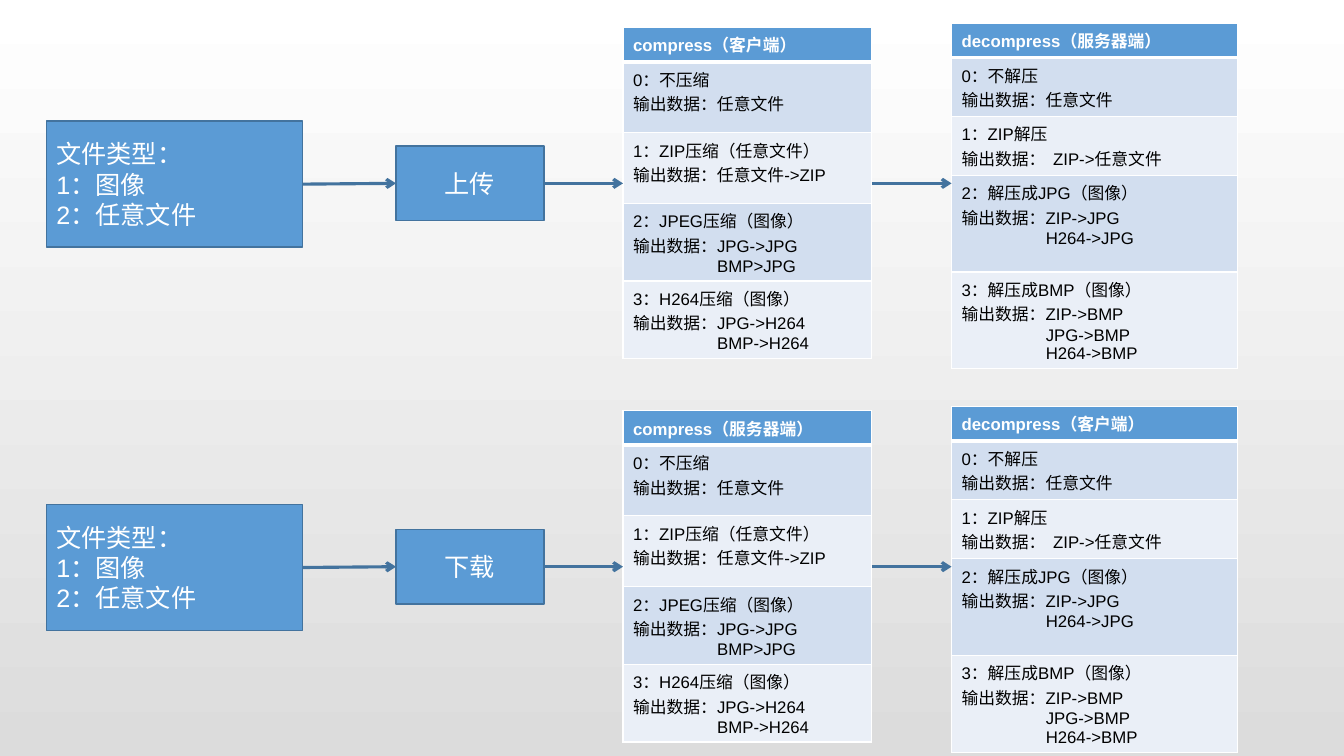
from lxml.etree import SubElement
from pptx import Presentation
from pptx.dml.color import RGBColor
from pptx.enum.shapes import MSO_CONNECTOR, MSO_SHAPE
from pptx.enum.text import MSO_ANCHOR, PP_ALIGN
from pptx.oxml import parse_xml
from pptx.oxml.ns import nsdecls, qn
from pptx.util import Cm, Pt

BLUE, OUTLINE, WHITE, BLACK = "5B9BD5", "43739E", "FFFFFF", "000000"
BANDS = ["D2DEEF", "EAEFF7"]
FLOW_STEP = 9.66
ARROW_Y = 4.62


def paint(target, color):
    if hasattr(target, "solid"):
        target.solid()
        target = target.fore_color
    target.rgb = RGBColor.from_string(color)


def write(frame, text, size, color, bold=False, align=PP_ALIGN.LEFT):
    frame.text = text
    for paragraph in frame.paragraphs:
        paragraph.alignment = align
        for run in paragraph.runs:
            run.font.name = "Arial"
            run.font.size = Pt(size)
            run.font.bold = bold
            paint(run.font.color, color)


compress_rows = [
    "0：不压缩\n输出数据：任意文件",
    "1：ZIP压缩（任意文件）\n输出数据：任意文件->ZIP",
    "2：JPEG压缩（图像）\n输出数据：JPG->JPG\nBMP>JPG",
    "3：H264压缩（图像）\n输出数据：JPG->H264\nBMP->H264",
]
decompress_rows = [
    "0：不解压\n输出数据：任意文件",
    "1：ZIP解压\n输出数据：  ZIP->任意文件",
    "2：解压成JPG（图像）\n输出数据：ZIP->JPG\nH264->JPG",
    "3：解压成BMP（图像）\n输出数据：ZIP->BMP\nJPG->BMP\nH264->BMP",
]
stages = [
    ("compress", compress_rows, 15.7, 0.69, 6.27, [0.86, 1.78, 1.78, 1.96, 1.96]),
    ("decompress", decompress_rows, 23.98, 0.58, 7.21, [0.86, 1.47, 1.47, 2.44, 2.44]),
]
flows = [("上传", ["客户端", "服务器端"]), ("下载", ["服务器端", "客户端"])]

prs = Presentation()
prs.slide_width, prs.slide_height = Cm(33.87), Cm(19.05)
slide = prs.slides.add_slide(prs.slide_layouts[6])
backdrop = slide.background.fill
backdrop.gradient()
backdrop.gradient_angle = 270
for stop, color in zip(backdrop.gradient_stops, [WHITE, "DCDCDC"]):
    paint(stop.color, color)

for flow, (action, sides) in enumerate(flows):
    offset = flow * FLOW_STEP

    steps = []
    for text, left, top, width, height, align in [
        ("文件类型：\n1：图像\n2：任意文件", 1.17, 3.05, 6.45, 3.18, PP_ALIGN.LEFT),
        (action, 9.98, 3.68, 3.73, 1.88, PP_ALIGN.CENTER),
    ]:
        step = slide.shapes.add_shape(
            MSO_SHAPE.RECTANGLE, Cm(left), Cm(top + offset), Cm(width), Cm(height))
        step.shadow.inherit = False
        paint(step.fill, BLUE)
        paint(step.line.fill, OUTLINE)
        step.line.width = Pt(1)
        step.text_frame.word_wrap = True
        step.text_frame.vertical_anchor = MSO_ANCHOR.MIDDLE
        write(step.text_frame, text, 18, WHITE, align=align)
        steps.append(step)
    file_type, transfer = steps

    for (stage, rows, left, top, width, heights), side in zip(stages, sides):
        table = slide.shapes.add_table(
            len(heights), 1, Cm(left), Cm(top + offset), Cm(width), Cm(sum(heights))).table
        table.columns[0].width = Cm(width)
        for index, (text, height) in enumerate(zip([f"{stage}（{side}）"] + rows, heights)):
            header = index == 0
            table.rows[index].height = Cm(height)
            cell = table.cell(index, 0)
            write(cell.text_frame, text, 12, WHITE if header else BLACK, bold=header)
            for continuation in cell.text_frame.paragraphs[2:]:
                continuation._p.get_or_add_pPr().set("marL", str(Cm(2.12)))
            borders = cell._tc.get_or_add_tcPr()
            for edge in ["lnL", "lnR", "lnT", "lnB"]:
                thick = (header and edge == "lnB") or (index == 1 and edge == "lnT")
                borders.append(parse_xml(
                    f'<a:{edge} {nsdecls("a")} w="{Pt(3 if thick else 1)}"><a:solidFill>'
                    f'<a:srgbClr val="{WHITE}"/></a:solidFill></a:{edge}>'))
            paint(cell.fill, BLUE if header else BANDS[(index - 1) % 2])

    for start, end, source, target in [
        (7.62, 9.98, file_type, transfer),
        (13.71, 15.7, transfer, None),
        (21.97, 23.98, None, None),
    ]:
        arrow = slide.shapes.add_connector(
            MSO_CONNECTOR.STRAIGHT, Cm(start), Cm(ARROW_Y + offset),
            Cm(end), Cm(ARROW_Y + offset))
        if source:
            arrow.begin_connect(source, 3)
        if target:
            arrow.end_connect(target, 1)
        paint(arrow.line.fill, OUTLINE)
        arrow.line.width = Pt(2.25)
        SubElement(arrow.line._get_or_add_ln(), qn("a:tailEnd"), type="arrow")
        SubElement(arrow._element.spPr, qn("a:effectLst"))

prs.save("out.pptx")
